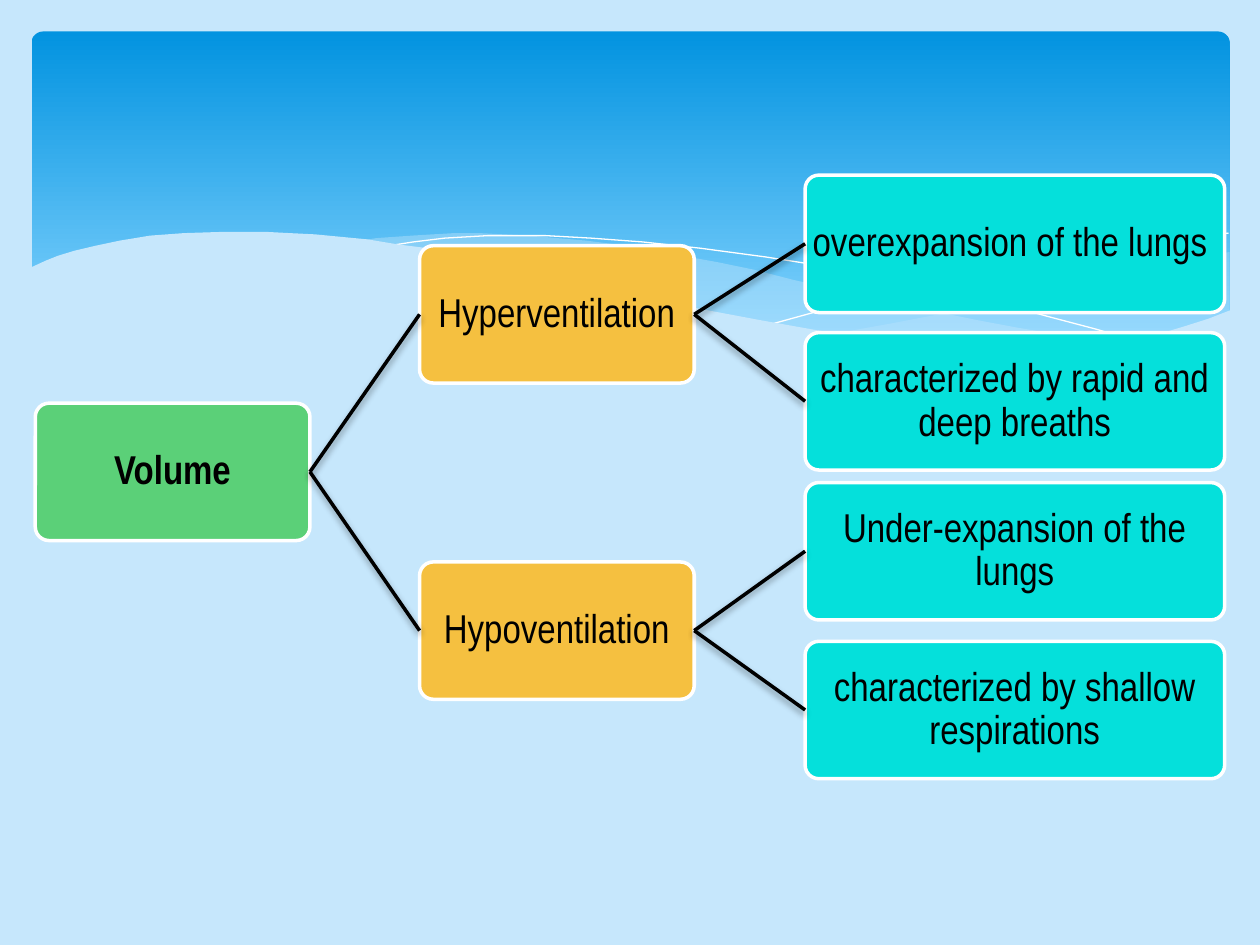
from dataclasses import dataclass
from typing import Any

from lxml.etree import SubElement
from pptx import Presentation
from pptx.dml.color import RGBColor
from pptx.enum.shapes import MSO_CONNECTOR, MSO_SHAPE
from pptx.enum.text import MSO_ANCHOR, PP_ALIGN
from pptx.oxml.ns import qn
from pptx.util import Inches, Pt

COLORS = {
    "sky": "C6E7FC",
    "band_top": "0293E0",
    "band_bottom": "83D3FE",
    "white": "FFFFFF",
    "black": "000000",
    "root": "5BD078",
    "branch": "F5C040",
    "leaf": "05E0DB",
}
COLUMNS, ROWS = 10, 7.5
BOX_HEIGHT = 1.09
LEVELS = {"root": (0.28, 2.18), "branch": (3.33, 2.18), "leaf": (6.39, 3.33)}

RIGHT_WAVE = [
    (9.76, 2), (9.48, 2.04), (9.21, 2.1), (8.91, 2.16), (8.61, 2.23), (8.05, 2.37),
    (7.53, 2.48), (7.06, 2.57), (6.61, 2.65), (6.91, 2.69), (7.19, 2.72), (7.45, 2.75),
    (7.69, 2.77), (8.03, 2.78), (8.35, 2.77), (8.63, 2.75), (8.89, 2.72), (9.13, 2.67),
    (9.35, 2.62), (9.49, 2.57), (9.76, 2.47),
]
MIDDLE_WAVE = [
    (8.93, 2.73), (8.66, 2.69), (8.37, 2.65), (8.07, 2.6), (7.75, 2.54), (7.41, 2.47),
    (7.06, 2.4), (6.68, 2.31), (6.29, 2.22), (5.98, 2.14), (5.69, 2.08), (5.41, 2.03),
    (5.14, 1.98), (4.89, 1.94), (4.65, 1.91), (4.42, 1.89), (4.2, 1.87), (3.99, 1.86),
    (3.8, 1.85), (3.61, 1.85), (3.28, 1.87), (2.99, 1.89), (2.86, 1.91), (3.23, 1.96),
    (3.62, 2.03), (4.04, 2.11), (4.49, 2.22), (4.91, 2.32), (5.3, 2.4), (5.66, 2.48),
    (6.01, 2.55), (6.34, 2.61), (6.65, 2.66), (6.95, 2.7), (7.22, 2.74), (7.48, 2.76),
    (7.85, 2.78), (8.38, 2.78), (8.67, 2.76),
]
LONG_CREST = [
    (3.09, 1.95), (3.28, 1.92), (3.53, 1.89), (3.87, 1.87), (4.33, 1.87), (4.69, 1.89),
    (5.1, 1.92), (5.56, 1.97), (6.08, 2.04), (6.65, 2.13), (6.95, 2.19), (7.27, 2.26),
    (7.6, 2.33), (7.95, 2.41), (8.31, 2.51), (8.69, 2.61), (9.07, 2.72),
]
SHORT_CREST = [
    (6.13, 2.57), (6.53, 2.46), (6.95, 2.35), (7.48, 2.23), (8.06, 2.1), (8.66, 1.99),
    (8.95, 1.94), (9.24, 1.9), (9.51, 1.87), (9.75, 1.85),
]
FRONT_WAVE = [
    (9.77, 2.46), (9.59, 2.53), (9.4, 2.59), (9.2, 2.65), (8.99, 2.69), (8.75, 2.73),
    (8.5, 2.75), (8.23, 2.77), (7.93, 2.76), (7.61, 2.75), (7.26, 2.72), (6.88, 2.68),
    (6.48, 2.62), (6.03, 2.54), (5.55, 2.45), (5.03, 2.33), (4.47, 2.2), (4.18, 2.13),
    (3.91, 2.07), (3.65, 2.02), (3.4, 1.97), (3.16, 1.94), (2.92, 1.9), (2.71, 1.88),
    (2.5, 1.86), (2.3, 1.85), (2.11, 1.84), (1.77, 1.84), (1.46, 1.85), (1.19, 1.87),
    (0.95, 1.91), (0.76, 1.95), (0.59, 1.99), (0.46, 2.03), (0.36, 2.07), (0.23, 2.13),
    (0.23, 3.29), (9.77, 3.29),
]


def rgb(name):
    return RGBColor.from_string(COLORS[name])


@dataclass
class TreeSlide:
    presentation: Any
    slide: Any
    font: str = "Arial Narrow"
    size: float = 23
    line_width: float = 2

    def place(self, column, row):
        return (round(self.presentation.slide_width * column / COLUMNS),
                round(self.presentation.slide_height * row / ROWS))

    def background(self, color):
        fill = self.slide.background.fill
        fill.solid()
        fill.fore_color.rgb = rgb(color)

    def rounded(self, column, row, width, height, radius):
        shape = self.slide.shapes.add_shape(
            MSO_SHAPE.ROUNDED_RECTANGLE, *self.place(column, row), *self.place(width, height))
        shape.adjustments[0] = radius
        shape.shadow.inherit = False
        return shape

    def band(self, column, row, width, height):
        shape = self.rounded(column, row, width, height, 0.034)
        shape.line.fill.background()
        shape.fill.gradient()
        shape.fill.gradient_angle = 270
        stops = zip(shape.fill.gradient_stops, (0, 0.9), ("band_top", "band_bottom"))
        for stop, position, color in stops:
            stop.position = position
            stop.color.rgb = rgb(color)

    def outline(self, points, close):
        corners = [self.place(*point) for point in points]
        builder = self.slide.shapes.build_freeform(*corners[0])
        builder.add_line_segments(corners[1:], close=close)
        shape = builder.convert_to_shape()
        shape.shadow.inherit = False
        return shape

    def wave(self, points, opacity=100):
        shape = self.outline(points, True)
        shape.line.fill.background()
        shape.fill.solid()
        shape.fill.fore_color.rgb = rgb("sky")
        if opacity < 100:
            color = shape.fill._xPr.find(".//" + qn("a:srgbClr"))
            SubElement(color, qn("a:alpha"), val=str(opacity * 1000))

    def crest(self, points):
        shape = self.outline(points, False)
        shape.fill.background()
        shape.line.color.rgb = rgb("white")
        shape.line.width = Pt(0)

    def box(self, text, level, row, bold=False):
        column, width = LEVELS[level]
        shape = self.rounded(column, row, width, BOX_HEIGHT, 0.1)
        shape.fill.solid()
        shape.fill.fore_color.rgb = rgb(level)
        shape.line.color.rgb = rgb("white")
        shape.line.width = Pt(self.line_width)
        frame = shape.text_frame
        frame.word_wrap = True
        frame.vertical_anchor = MSO_ANCHOR.MIDDLE
        frame.margin_left = frame.margin_right = Inches(0.02)
        frame.margin_top = frame.margin_bottom = Inches(0.02)
        frame.text = text
        paragraph = frame.paragraphs[0]
        paragraph.alignment = PP_ALIGN.CENTER
        paragraph.line_spacing = 0.9
        font = paragraph.runs[0].font
        font.name, font.size, font.bold = self.font, Pt(self.size), bold
        font.color.rgb = rgb("black")
        return shape

    def link(self, parent, child):
        connector = self.slide.shapes.add_connector(MSO_CONNECTOR.STRAIGHT, 0, 0, 0, 0)
        connector.begin_connect(parent, 3)
        connector.end_connect(child, 1)
        connector.line.color.rgb = rgb("black")
        connector.line.width = Pt(self.line_width)
        effects = SubElement(connector._element.spPr, qn("a:effectLst"))
        shadow = SubElement(effects, qn("a:outerShdw"), blurRad=str(Pt(4)),
                            dist=str(Pt(2)), dir="5400000", rotWithShape="0")
        color = SubElement(shadow, qn("a:srgbClr"), val=COLORS["black"])
        SubElement(color, qn("a:alpha"), val="38000")


def main():
    presentation = Presentation()
    presentation.slide_width, presentation.slide_height = Inches(COLUMNS), Inches(ROWS)
    tree = TreeSlide(presentation, presentation.slides.add_slide(presentation.slide_layouts[6]))

    tree.background("sky")
    tree.band(0.25, 0.25, 9.51, 2.7)
    tree.wave(RIGHT_WAVE, 29)
    tree.wave(MIDDLE_WAVE, 40)
    tree.crest(LONG_CREST)
    tree.crest(SHORT_CREST)
    tree.wave(FRONT_WAVE)

    branches = [
        ("Hyperventilation", 1.95, [("overexpansion of the lungs ", 1.39),
                                    ("characterized by rapid and deep breaths", 2.64)]),
        ("Hypoventilation", 4.46, [("Under-expansion of the lungs", 3.83),
                                   ("characterized by shallow respirations", 5.09)]),
    ]
    root = tree.box("Volume", "root", 3.2, bold=True)
    for name, row, leaves in branches:
        branch = tree.box(name, "branch", row)
        tree.link(root, branch)
        for text, leaf_row in leaves:
            tree.link(branch, tree.box(text, "leaf", leaf_row))

    presentation.save("out.pptx")


if __name__ == "__main__":
    main()
